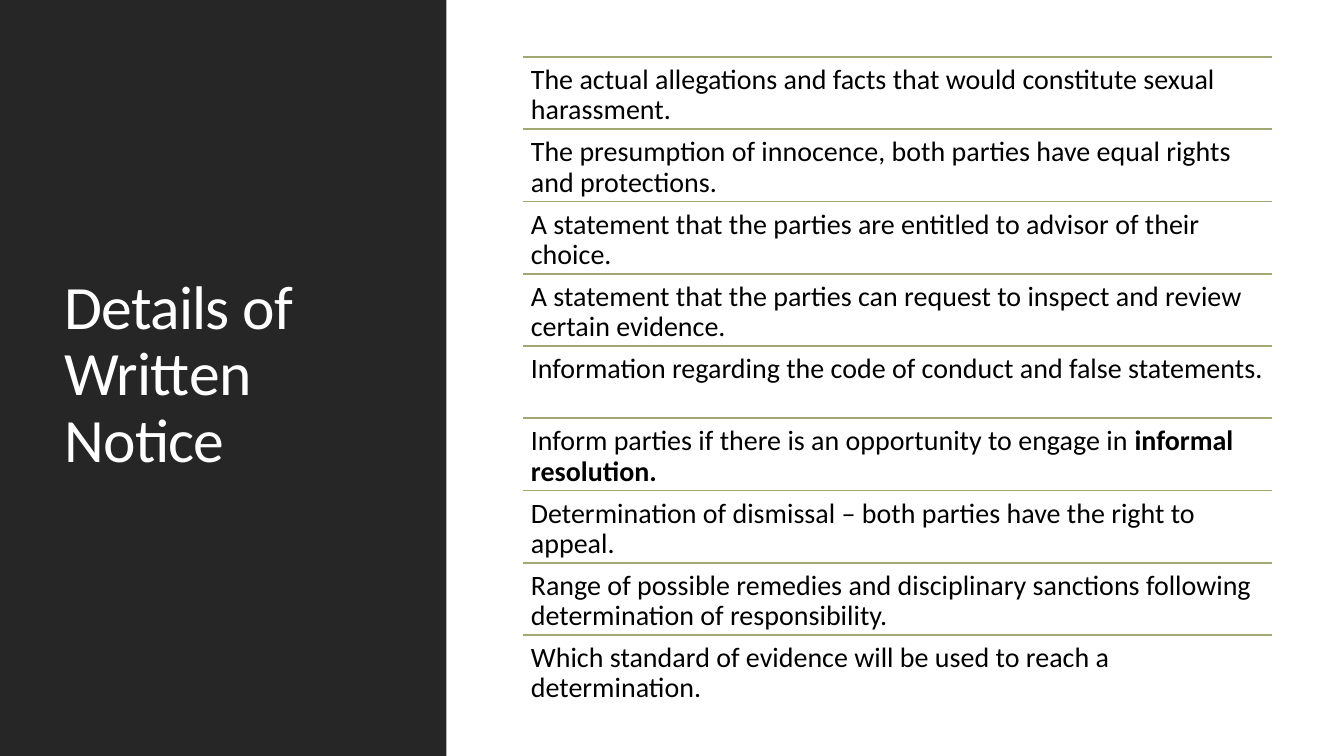
from dataclasses import dataclass

from lxml.etree import SubElement
from pptx import Presentation
from pptx.dml.color import RGBColor
from pptx.enum.shapes import MSO_CONNECTOR as Connector, MSO_SHAPE as Preset
from pptx.enum.text import MSO_ANCHOR as Anchor
from pptx.oxml.ns import qn
from pptx.util import Cm, Pt


@dataclass(frozen=True)
class Theme:
    font: str = "Calibri"
    panel: RGBColor = RGBColor(0x26, 0x26, 0x26)
    title: RGBColor = RGBColor(0xFF, 0xFF, 0xFF)
    body: RGBColor = RGBColor(0x00, 0x00, 0x00)
    rule: RGBColor = RGBColor(0xA3, 0xA8, 0x72)
    title_size: Pt = Pt(44)
    body_size: Pt = Pt(20)
    rule_width: Pt = Pt(1.25)


THEME = Theme()

LIST_LEFT = 13.18
LIST_TOP = 1.44
LIST_WIDTH = 18.87
ROW_HEIGHT = 1.82

NOTICE_DETAILS = [
    [("The actual allegations and facts that would constitute sexual harassment.", False)],
    [("The presumption of innocence, both parties have equal rights and protections.", False)],
    [("A statement that the parties are entitled to advisor of their choice.", False)],
    [("A statement that the parties can request to inspect and review certain evidence.", False)],
    [("Information regarding the code of conduct and false statements.", False)],
    [("Inform parties if there is an opportunity to engage in ", False),
     ("informal resolution.", True)],
    [("Determination of dismissal – both parties have the right to appeal.", False)],
    [("Range of possible remedies and disciplinary sanctions following "
      "determination of responsibility.", False)],
    [("Which standard of evidence will be used to reach a determination.", False)],
]


def add_panel(slide, width, height):
    panel = slide.shapes.add_shape(Preset.RECTANGLE, 0, 0, width, height)
    panel.shadow.inherit = False
    panel.fill.solid()
    panel.fill.fore_color.rgb = THEME.panel
    panel.line.fill.background()


def add_text_frame(slide, left, top, width, height, anchor):
    box = slide.shapes.add_textbox(Cm(left), Cm(top), Cm(width), Cm(height))
    frame = box.text_frame
    frame.word_wrap = True
    frame.vertical_anchor = anchor
    frame.paragraphs[0].line_spacing = 0.9
    return frame


def add_run(paragraph, text, size, color, bold=False):
    run = paragraph.add_run()
    run.text = text
    run.font.name = THEME.font
    run.font.size = size
    run.font.bold = bold
    run.font.color.rgb = color
    return run


def add_title(slide, text):
    frame = add_text_frame(slide, 1.37, 1.45, 8.56, 16.03, Anchor.MIDDLE)
    run = add_run(frame.paragraphs[0], text, THEME.title_size, THEME.title)
    run.font._element.set("spc", "-50")


def add_rule(slide, top):
    rule = slide.shapes.add_connector(
        Connector.STRAIGHT, Cm(LIST_LEFT), Cm(top), Cm(LIST_LEFT + LIST_WIDTH), Cm(top))
    rule.line.color.rgb = THEME.rule
    rule.line.width = THEME.rule_width
    SubElement(rule._element.spPr, qn("a:effectLst"))


def add_detail(slide, top, runs):
    add_rule(slide, top)
    frame = add_text_frame(slide, LIST_LEFT, top, LIST_WIDTH, ROW_HEIGHT, Anchor.TOP)
    frame.margin_left = frame.margin_right = Cm(0.2)
    frame.margin_top = frame.margin_bottom = Cm(0.21)
    paragraph = frame.paragraphs[0]
    paragraph.space_after = Pt(7)
    for text, bold in runs:
        add_run(paragraph, text, THEME.body_size, THEME.body, bold)


def main():
    presentation = Presentation()
    presentation.slide_width = Cm(33.87)
    presentation.slide_height = Cm(19.05)
    slide = presentation.slides.add_slide(presentation.slide_layouts[6])

    add_panel(slide, Cm(11.25), presentation.slide_height)
    add_title(slide, "Details of Written Notice")
    for row, runs in enumerate(NOTICE_DETAILS):
        add_detail(slide, LIST_TOP + row * ROW_HEIGHT, runs)

    presentation.save("out.pptx")


if __name__ == "__main__":
    main()
